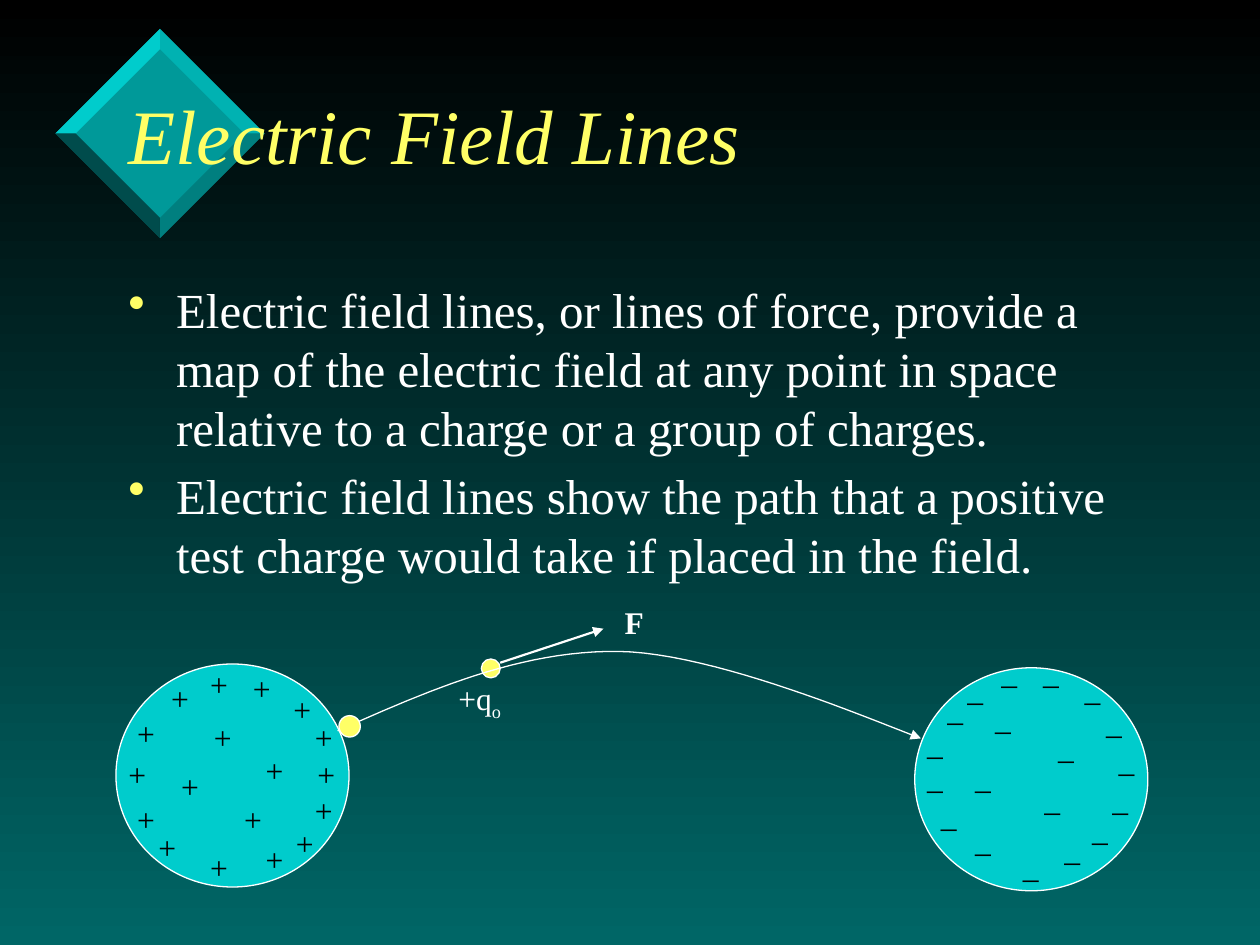
from lxml import etree
from pptx import Presentation
from pptx import util as u
from pptx.dml.color import RGBColor
from pptx.enum import shapes, text
from pptx.oxml import ns

PX = 9144  # 100 px to the inch
FONT = "Times New Roman"
COLORS = {
    "black": "000000", "white": "FFFFFF", "yellow": "FFFF66", "deep": "006666",
    "teal": "009999", "aqua": "00CCCC",
}
CHARGE_SIZE = (34, 40)
PLUS_SPOTS = [
    (191, 526), (223, 543), (240, 565), (242, 594), (201, 591), (240, 623),
    (225, 649), (184, 630), (201, 662), (134, 604), (157, 668), (99, 630),
    (116, 652), (126, 534), (160, 565), (157, 523), (92, 594), (99, 562),
]
MINUS_SPOTS = [
    (818, 513), (785, 513), (878, 583), (758, 527), (726, 570), (726, 597),
    (737, 627), (868, 553), (873, 614), (742, 543), (857, 638), (835, 654),
    (802, 667), (764, 647), (851, 527), (780, 550), (830, 573), (764, 597),
    (819, 614),
]
BULLETS = [
    "Electric field lines, or lines of force, provide a map of the electric field "
    "at any point in space relative to a charge or a group of charges.",
    "Electric field lines show the path that a positive test charge would take "
    "if placed in the field.",
]


def px(*lengths):
    return [u.Emu(round(length * PX)) for length in lengths]


def rgb(name):
    return RGBColor.from_string(COLORS[name])


def add_xml(parent, tag, **attributes):
    child = etree.SubElement(parent, ns.qn(tag))
    for key, value in attributes.items():
        child.set(key, str(value))
    return child


def bezier(start, control_a, control_b, end, steps=24):
    """Points along a cubic curve, without its start."""
    points = []
    for step in range(1, steps + 1):
        t = step / steps
        weights = ((1 - t) ** 3, 3 * t * (1 - t) ** 2, 3 * t * t * (1 - t), t ** 3)
        corners = (start, control_a, control_b, end)
        points.append(tuple(sum(w * c[axis] for w, c in zip(weights, corners))
                            for axis in (0, 1)))
    return points


class SlideBuilder:
    def __init__(self, slide):
        self.slide = slide

    def background(self, top, bottom):
        fill = self.slide.background.fill
        fill.gradient()
        fill.gradient_angle = 270
        for stop, color, position in zip(fill.gradient_stops, (top, bottom), (0, 1)):
            stop.color.rgb = rgb(color)
            stop.position = position

    def style_run(self, span, size, color, bold=False, italic=False):
        font = span.font
        font.name, font.size, font.color.rgb = FONT, u.Pt(size), rgb(color)
        font.bold, font.italic = bold, italic

    def style_line(self, line, width=0.75, arrow=False):
        line.color.rgb = rgb("white")
        line.width = u.Pt(width)
        if arrow:
            add_xml(line._get_or_add_ln(), "a:tailEnd", type="triangle")

    def title(self, words, left, top, width, height):
        title = self.slide.shapes.title
        title.left, title.top, title.width, title.height = px(left, top, width, height)
        title.text_frame.text = words
        title.text_frame.vertical_anchor = text.MSO_ANCHOR.MIDDLE
        para = title.text_frame.paragraphs[0]
        para.alignment = text.PP_ALIGN.LEFT
        self.style_run(para.runs[0], 44, "yellow", italic=True)

    def bullets(self, items, left, top, width, height):
        box = self.slide.shapes.add_textbox(*px(left, top, width, height))
        frame = box.text_frame
        frame.word_wrap = True
        frame.text = "\n".join(items)
        for para in frame.paragraphs:
            self.style_run(para.runs[0], 28, "white")
            props = para._p.get_or_add_pPr()
            indent = px(38)[0]
            props.set("marL", str(indent))
            props.set("indent", str(-indent))
            add_xml(add_xml(props, "a:spcBef"), "a:spcPct", val=20000)
            add_xml(add_xml(props, "a:buClr"), "a:srgbClr", val=COLORS["yellow"])
            add_xml(props, "a:buChar", char="•")

    def label(self, words, left, top, width, height, color="white", bold=False, subscript=""):
        box = self.slide.shapes.add_textbox(*px(left, top, width, height))
        box.text_frame.word_wrap = False
        box.text_frame.text = words
        para = box.text_frame.paragraphs[0]
        if subscript:
            para.add_run().text = subscript
            para.runs[1].font._element.set("baseline", "-25000")
        for span in para.runs:
            self.style_run(span, 18, color, bold)

    def circle(self, color, left, top, width, height):
        circle = self.slide.shapes.add_shape(shapes.MSO_SHAPE.OVAL, *px(left, top, width, height))
        circle.shadow.inherit = False
        circle.fill.solid()
        circle.fill.fore_color.rgb = rgb(color)
        self.style_line(circle.line)

    def outline(self, points, closed):
        start, *rest = [px(*point) for point in points]
        builder = self.slide.shapes.build_freeform(*start)
        builder.add_line_segments(rest, close=closed)
        outline = builder.convert_to_shape()
        outline.shadow.inherit = False
        return outline

    def facet(self, points, color, opacity=100):
        facet = self.outline(points, closed=True)
        facet.line.fill.background()
        facet.fill.solid()
        facet.fill.fore_color.rgb = rgb(color)
        if opacity < 100:
            tint = facet._element.spPr.find(".//" + ns.qn("a:srgbClr"))
            add_xml(tint, "a:alpha", val=opacity * 1000)

    def curve(self, start, *segments):
        points = [start]
        for segment in segments:
            points += bezier(points[-1], *segment)
        curve = self.outline(points, closed=False)
        curve.fill.background()
        self.style_line(curve.line, arrow=True)

    def arrow(self, start, end):
        arrow = self.slide.shapes.add_connector(
            shapes.MSO_CONNECTOR.STRAIGHT, *px(*start, *end))
        self.style_line(arrow.line, 1.25, arrow=True)
        add_xml(arrow._element.spPr, "a:effectLst")

    def diamond(self, x, y, outer, inner):
        """Bevelled diamond around a centre."""
        top, right, bottom, left = [
            [(x + dx * half, y + dy * half) for half in (outer, inner)]
            for dx, dy in ((0, -1), (1, 0), (0, 1), (-1, 0))]
        self.facet([corner[0] for corner in (top, right, bottom, left)], "teal")
        for first, second, color, opacity in (
                (top, right, "aqua", 50), (left, top, "aqua", 100),
                (right, bottom, "deep", 50), (bottom, left, "black", 50)):
            self.facet([first[1], first[0], second[0], second[1]], color, opacity)


def main():
    deck = Presentation()
    deck.slide_width, deck.slide_height = px(1000, 750)
    page = SlideBuilder(deck.slides.add_slide(deck.slide_layouts[5]))
    page.background("black", "deep")
    page.diamond(127, 106, 83, 67)
    # The title is drawn over the diamond.
    tree = page.slide.shapes._spTree
    tree.append(page.slide.shapes.title._element)
    page.title("Electric Field Lines", 92, 46, 851, 121)
    page.bullets(BULLETS, 92, 217, 850, 450)

    page.circle("aqua", 726, 530, 185, 177)
    page.circle("aqua", 92, 527, 185, 177)
    for sign, spots in (("+", PLUS_SPOTS), ("_", MINUS_SPOTS)):
        for spot in spots:
            page.label(sign, *spot, *CHARGE_SIZE, color="black")

    page.circle("yellow", 382, 523, 15, 15)
    page.label("+q", 354, 534, 55, 40, subscript="o")
    page.arrow((397, 526), (479, 499))
    page.label("F", 486, 474, 35, 40, bold=True)
    page.curve((268, 580), ((340, 548), (413, 516), (491, 517)),
               ((568, 518), (696, 573), (731, 586)))
    page.circle("yellow", 269, 568, 17, 17)
    deck.save("out.pptx")


if __name__ == "__main__":
    main()
